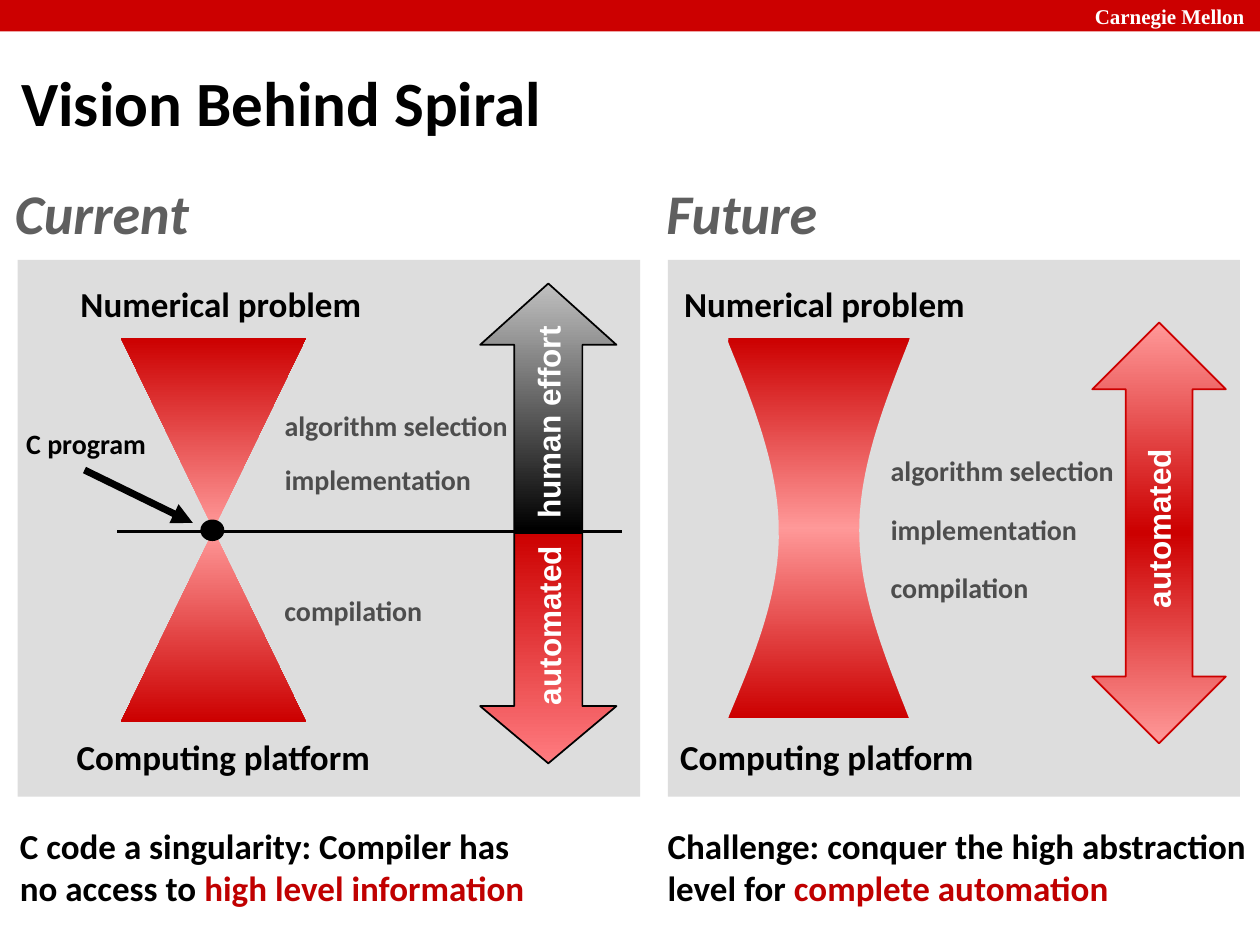
from copy import deepcopy

from lxml import etree
from pptx import Presentation
from pptx.dml.color import RGBColor
from pptx.enum import shapes, text
from pptx.oxml import ns
from pptx.util import Pt

RED = RGBColor(0xCC, 0x00, 0x00)
PINK = RGBColor(0xFF, 0x99, 0x99)
CORAL = RGBColor(0xFF, 0x7C, 0x80)
ACCENT = RGBColor(0xC0, 0x00, 0x00)
PANEL = RGBColor(0xDD, 0xDD, 0xDD)
SILVER = RGBColor(0xC0, 0xC0, 0xC0)
SLATE = RGBColor(0x5F, 0x5F, 0x5F)
CHARCOAL = RGBColor(0x4D, 0x4D, 0x4D)
BLACK = RGBColor(0x00, 0x00, 0x00)
WHITE = RGBColor(0xFF, 0xFF, 0xFF)

KIND = shapes.MSO_SHAPE
ALIGN = text.PP_ALIGN


def curve_points(start, handle_1, handle_2, end, steps=24):
    points = []
    for step in range(1, steps + 1):
        t = step / steps
        weights = ((1 - t) ** 3, 3 * t * (1 - t) ** 2, 3 * t ** 2 * (1 - t), t ** 3)
        controls = (start, handle_1, handle_2, end)
        points.append(tuple(
            Pt(sum(w * c[axis] for w, c in zip(weights, controls))) for axis in (0, 1)))
    return points


class SlideBuilder:
    def __init__(self, slide, font="Calibri"):
        self.slide = slide
        self.font = font

    def style(self, paragraph, size, color, font=None, italic=False):
        for run in paragraph.runs:
            run.font.name = font or self.font
            run.font.size = Pt(size)
            run.font.bold = True
            run.font.italic = italic
            run.font.color.rgb = color

    def title(self, words, box):
        title = self.slide.shapes.title
        title.left, title.top, title.width, title.height = map(Pt, box)
        frame = title.text_frame
        frame.text = words
        frame.vertical_anchor = text.MSO_ANCHOR.MIDDLE
        frame.paragraphs[0].alignment = ALIGN.LEFT
        self.style(frame.paragraphs[0], 36, BLACK)

    def label(self, words, box, size, color=BLACK, accent="", align=ALIGN.LEFT,
              rotation=0, font=None, italic=False):
        label = self.slide.shapes.add_textbox(*map(Pt, box))
        label.rotation = rotation
        frame = label.text_frame
        frame.word_wrap = False
        frame.auto_size = text.MSO_AUTO_SIZE.SHAPE_TO_FIT_TEXT
        paragraph = frame.paragraphs[0]
        paragraph.text = words
        paragraph.alignment = align
        if accent:
            paragraph.add_run().text = accent
        self.style(paragraph, size, color, font, italic)
        if accent:
            paragraph.runs[-1].font.color.rgb = ACCENT

    def shape(self, kind, box, colors, outline=None, flip=False, adjust=()):
        shape = self.slide.shapes.add_shape(kind, *map(Pt, box))
        for index, value in enumerate(adjust):
            shape.adjustments[index] = value
        if flip:
            shape.element.spPr.find(ns.qn("a:xfrm")).set("flipV", "1")
        self.paint(shape, colors, outline)

    def paint(self, shape, colors, outline=None):
        shape.shadow.inherit = False
        if outline is None:
            shape.line.fill.background()
        else:
            shape.line.color.rgb = outline
            shape.line.width = Pt(1)
        if len(colors) == 1:
            shape.fill.solid()
            shape.fill.fore_color.rgb = colors[0]
            return
        shape.fill.gradient()
        shape.fill.gradient_angle = 270
        stop_list = shape.element.spPr.find(ns.qn("a:gradFill")).find(ns.qn("a:gsLst"))
        for _ in colors[2:]:
            stop_list.append(deepcopy(stop_list[-1]))
        for index, (stop, color) in enumerate(zip(shape.fill.gradient_stops, colors)):
            stop.color.rgb = color
            stop.position = index / (len(colors) - 1)

    def bow(self, start, *curves):
        outline = self.slide.shapes.build_freeform(*map(Pt, start), scale=1.0)
        for curve in curves:
            outline.add_line_segments(curve_points(start, *curve), close=False)
            start = curve[-1]
        outline.add_line_segments([], close=True)
        self.paint(outline.convert_to_shape(), [PANEL])

    def line(self, start, end, width, arrow=False):
        line = self.slide.shapes.add_connector(
            shapes.MSO_CONNECTOR.STRAIGHT, *map(Pt, start + end))
        line.line.color.rgb = BLACK
        line.line.width = Pt(width)
        if arrow:
            etree.SubElement(line.line._get_or_add_ln(), ns.qn("a:tailEnd"), type="triangle")
        etree.SubElement(line.element.spPr, ns.qn("a:effectLst"))


def label_stages(builder, left, stages_left, stage_tops):
    builder.label("Numerical problem", (left + 2.2, 157.7, 176.4, 31.7), 20)
    builder.label("Computing platform", (left, 416.9, 184.3, 31.7), 20)
    stages = (("algorithm selection", 143.3), ("implementation", 122.4), ("compilation", 94.3))
    for (stage, width), top in zip(stages, stage_tops):
        builder.label(stage, (stages_left, top, width, 26.6), 16, CHARCOAL, align=ALIGN.CENTER)


def draw_current(builder):
    builder.shape(KIND.RECTANGLE, (10.1, 148.6, 355.7, 306.7), [PANEL])
    for top, flip in ((193, True), (303.1, False)):
        builder.shape(KIND.ISOSCELES_TRIANGLE, (69.1, top, 105.8, 109.4), [PINK, RED], flip=flip)
    builder.shape(KIND.OVAL, (114.5, 296.9, 13.7, 12.3), [BLACK])
    builder.line((67, 303.7), (355.7, 303.7), 2)
    builder.shape(KIND.UP_ARROW, (274.4, 162, 77.9, 140.8), [SILVER, BLACK], BLACK,
                  adjust=(0.5, 0.45))
    builder.shape(KIND.UP_ARROW, (274.4, 304.6, 77.9, 131.6), [CORAL, RED], BLACK,
                  flip=True, adjust=(0.5, 0.42))
    builder.label("human effort", (251, 226.8, 124.6, 28.8), 18, WHITE, rotation=270,
                  font="Arial")
    builder.label("automated", (260.6, 342.7, 105.8, 28.8), 18, WHITE, rotation=270,
                  font="Arial")
    builder.line((48.3, 268.6), (110.2, 298.8), 4, arrow=True)
    builder.label("C program", (7.9, 240.5, 84.2, 26.6), 16)
    label_stages(builder, 36.7, 154.8, (229.7, 260.6, 335.5))
    builder.label("Current", (1.4, 98.3, 115.2, 46.1), 32, SLATE, italic=True)
    builder.label("C code a singularity: Compiler has\vno access to ",
                  (4.3, 467.6, 305.3, 55.4), 20, accent="high level information")


def draw_future(builder):
    builder.shape(KIND.RECTANGLE, (381.6, 148.6, 326.9, 306.7), [PANEL])
    for top, flip in ((193, False), (301, True)):
        builder.shape(KIND.RECTANGLE, (416.2, top, 103.7, 109.4), [RED, PINK], flip=flip)
    builder.bow((414.7, 192.2),
                ((429.8, 229), (445, 266.4), (445, 303.1)),
                ((445.7, 339.8), (430.6, 375.8), (415.4, 411.8)))
    builder.bow((521.3, 190.1),
                ((506.2, 228.2), (491, 265.7), (491, 303.1)),
                ((491, 340.6), (506.2, 376.6), (520.6, 413.3)))
    builder.shape(KIND.UP_DOWN_ARROW, (624.2, 184.3, 76.3, 240.5), [PINK, RED, PINK], RED,
                  adjust=(0.63, 0.5))
    builder.label("automated", (609.1, 287.3, 105.8, 28.8), 18, WHITE, rotation=270,
                  font="Arial")
    label_stages(builder, 381.6, 501.1, (255.6, 289.4, 322.6))
    builder.label("Future", (373.7, 98.3, 101.5, 46.1), 32, SLATE, italic=True)
    builder.label("Challenge: conquer the high abstraction\vlevel for ",
                  (374.4, 467.6, 352.8, 55.4), 20, accent="complete automation")


def main():
    deck = Presentation()
    deck.slide_width, deck.slide_height = Pt(720), Pt(540)
    builder = SlideBuilder(deck.slides.add_slide(deck.slide_layouts[5]))
    builder.shape(KIND.RECTANGLE, (0, 0, 720, 18), [RED])
    builder.label("Carnegie Mellon", (618.5, -1.4, 100.1, 21.6), 12, WHITE,
                  font="Times New Roman")
    builder.title("Vision Behind Spiral", (5, 27.8, 689, 59.8))
    draw_current(builder)
    draw_future(builder)
    deck.save("out.pptx")


if __name__ == "__main__":
    main()
